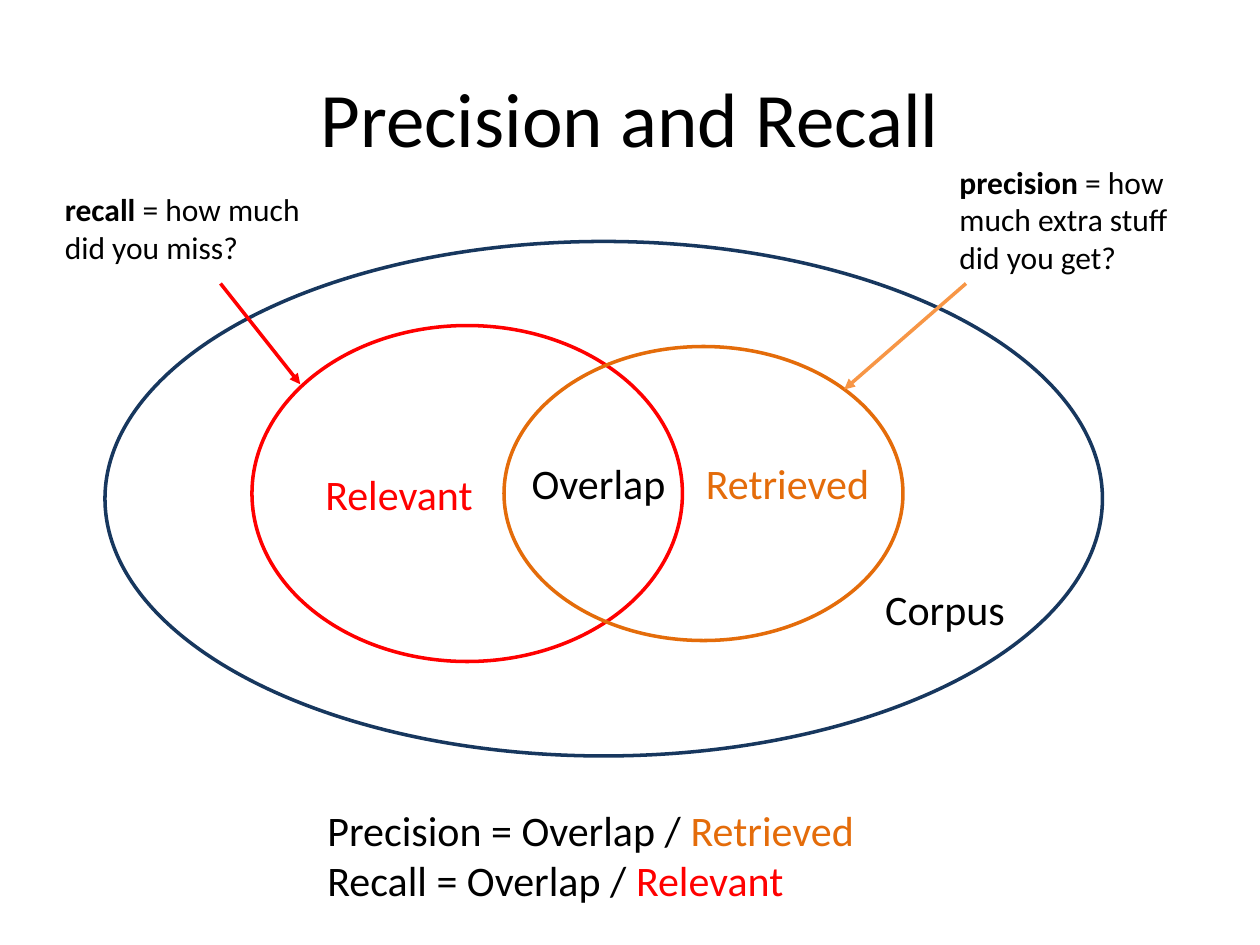
import pptx
import pptx.util
import pptx.dml.color
import pptx.enum.shapes
import pptx.enum.text
import pptx.oxml.ns
from lxml import etree

BLACK, NAVY, RED, ORANGE, LIGHT_ORANGE = "000000", "17375E", "FF0000", "E46C0A", "F79646"
COLUMNS, ROWS = 120, 90
ALIGN = pptx.enum.text.PP_ALIGN
ANCHOR = pptx.enum.text.MSO_ANCHOR


def color(value):
    return pptx.dml.color.RGBColor.from_string(value)


class Board:
    font = "Calibri"
    stroke = pptx.util.Pt(2)

    def __init__(self, deck):
        self.slide = deck.slides.add_slide(deck.slide_layouts[6])
        self.column = deck.slide_width / COLUMNS
        self.row = deck.slide_height / ROWS

    def place(self, x, y, x2, y2):
        return [round(n * unit) for n, unit in
                zip((x, y, x2, y2), (self.column, self.row) * 2)]

    def ellipse(self, box, line):
        oval = self.slide.shapes.add_shape(
            pptx.enum.shapes.MSO_SHAPE.OVAL, *self.place(*box))
        oval.shadow.inherit = False
        oval.fill.background()
        oval.line.color.rgb = color(line)
        oval.line.width = self.stroke

    def arrow(self, ends, line):
        arrow = self.slide.shapes.add_connector(
            pptx.enum.shapes.MSO_CONNECTOR.STRAIGHT, *self.place(*ends))
        arrow.line.color.rgb = color(line)
        arrow.line.width = self.stroke
        qn = pptx.oxml.ns.qn
        etree.SubElement(arrow.line._get_or_add_ln(), qn("a:tailEnd"), type="triangle")
        etree.SubElement(arrow._element.spPr, qn("a:effectLst"))

    def text(self, box, paragraphs, size, align=ALIGN.LEFT, anchor=ANCHOR.TOP):
        frame = self.slide.shapes.add_textbox(*self.place(*box)).text_frame
        frame.word_wrap = True
        frame.vertical_anchor = anchor
        for index, runs in enumerate(paragraphs):
            paragraph = frame.add_paragraph() if index else frame.paragraphs[0]
            paragraph.alignment = align
            for wording, hue, bold in runs:
                run = paragraph.add_run()
                run.text = wording
                run.font.name = self.font
                run.font.size = pptx.util.Pt(size)
                run.font.bold = bold
                run.font.color.rgb = color(hue)

    def label(self, x, y, wording, hue):
        self.text((x, y, 20, 6), [[(wording, hue, False)]], 24, ALIGN.CENTER)

    def question(self, box, term, meaning):
        self.text(box, [[(term, BLACK, True), (meaning, BLACK, False)]], 18)


def main():
    deck = pptx.Presentation()
    deck.slide_width = pptx.util.Inches(10)
    deck.slide_height = pptx.util.Inches(7.5)
    board = Board(deck)

    board.text((6, 3.6, 108, 15), [[("Precision and Recall", BLACK, False)]], 44,
               ALIGN.CENTER, ANCHOR.MIDDLE)

    for box, line in (((10, 23, 95, 49), NAVY),
                      ((24, 31, 41, 32), RED),
                      ((48, 33, 38, 28), ORANGE)):
        board.ellipse(box, line)

    for x, y, wording, hue in ((80, 55, "Corpus", BLACK),
                               (65, 43, "Retrieved", ORANGE),
                               (28, 44, "Relevant", RED),
                               (47, 43, "Overlap", BLACK)):
        board.label(x, y, wording, hue)

    formulas = [[(f"{measure} = Overlap / ", BLACK, False), (divisor, hue, False)]
                for measure, divisor, hue in (("Precision", "Retrieved", ORANGE),
                                              ("Recall", "Relevant", RED))]
    board.text((30, 76, 57, 10.9), formulas, 24)

    board.question((90.2, 14.9, 25, 12.1), "precision", " = how much extra stuff did you get?")
    board.arrow((92, 27, 80.4, 37.1), LIGHT_ORANGE)
    board.arrow((21, 27, 28.6, 36.6), RED)
    board.question((5, 17.5, 25, 8.5), "recall", " = how much did you miss?")

    deck.save("out.pptx")


if __name__ == "__main__":
    main()
